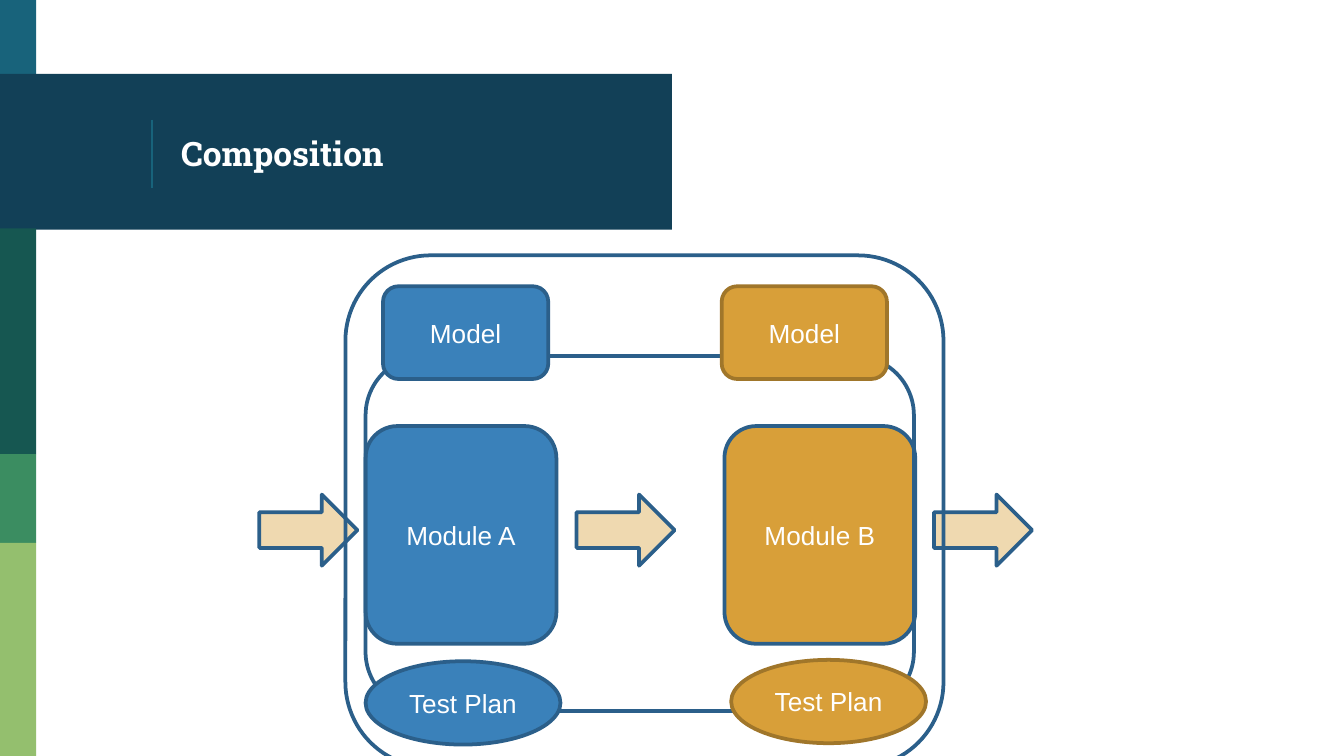
from dataclasses import dataclass

from lxml import etree
from pptx import Presentation
from pptx.dml.color import RGBColor
from pptx.enum import shapes as kinds, text as txt
from pptx.oxml.ns import qn
from pptx.util import Inches, Pt

COLORS = {
    "teal": "18637B", "navy": "124057", "pine": "165751", "green": "3B8D61",
    "lime": "94BF6E", "white": "FFFFFF", "blue": "3A81BA", "gold": "D89F39",
    "sand": "EFD9B0", "blue_edge": "2B5F8A", "gold_edge": "A0762A",
}
SHAPE = kinds.MSO_SHAPE
SLIDE_WIDTH = 10
SLIDE_HEIGHT = SLIDE_WIDTH * 9 / 16


@dataclass(frozen=True)
class Block:
    kind: SHAPE
    left: float
    top: float
    width: float
    height: float
    fill: str | None = None
    edge: str | None = None
    label: str = ""


def color(name: str) -> RGBColor:
    return RGBColor.from_string(COLORS[name])


def write(frame, words: str, font_format: dict, align=None) -> None:
    frame.word_wrap = True
    frame.vertical_anchor = txt.MSO_ANCHOR.MIDDLE
    paragraph = frame.paragraphs[0]
    paragraph.alignment = align
    run = paragraph.add_run()
    run.text = words
    for attribute, value in font_format.items():
        setattr(run.font, attribute, value)
    run.font.color.rgb = color("white")


def draw_block(slide, block: Block) -> None:
    shape = slide.shapes.add_shape(
        block.kind, Inches(block.left), Inches(block.top),
        Inches(block.width), Inches(block.height))
    shape.shadow.inherit = False
    if block.fill:
        shape.fill.solid()
        shape.fill.fore_color.rgb = color(block.fill)
    else:
        shape.fill.background()
    if block.edge:
        shape.line.color.rgb = color(block.edge)
        shape.line.width = Pt(2)
    else:
        shape.line.fill.background()
    if block.label:
        write(shape.text_frame, block.label, {"name": "Arial", "size": Pt(14)},
              txt.PP_ALIGN.CENTER)


def draw_title_rule(slide) -> None:
    rule = slide.shapes.add_connector(
        kinds.MSO_CONNECTOR.STRAIGHT,
        Inches(1.13), Inches(0.89), Inches(1.13), Inches(1.4))
    rule.line.color.rgb = color("teal")
    rule.line.width = Pt(0.75)
    etree.SubElement(rule._element.spPr, qn("a:effectLst"))


def draw_title(slide) -> None:
    title = slide.shapes.add_textbox(
        Inches(1.25), Inches(0.58), Inches(3.51), Inches(1.12))
    frame = title.text_frame
    for side in ("left", "top", "right", "bottom"):
        setattr(frame, f"margin_{side}", Inches(0.1))
    write(frame, "Composition",
          {"name": "Roboto Slab", "size": Pt(18), "bold": True})


SIDEBAR_WIDTH = 0.27
BACKDROP = [
    Block(SHAPE.RECTANGLE, 0, top, width, height, fill)
    for top, width, height, fill in (
        (0, SIDEBAR_WIDTH, 0.58, "teal"),
        (0.55, 5, 1.16, "navy"),
        (1.7, SIDEBAR_WIDTH, 1.68, "pine"),
        (3.38, SIDEBAR_WIDTH, 0.66, "green"),
        (4.04, SIDEBAR_WIDTH, 1.59, "lime"),
    )
]
MODULES = [
    Block(SHAPE.ROUNDED_RECTANGLE, left, 3.17, 1.42, 1.62, fill, "blue_edge", label)
    for left, fill, label in ((2.72, "blue", "Module A"), (5.39, "gold", "Module B"))
]
FLOW_ARROWS = [
    Block(SHAPE.RIGHT_ARROW, left, 3.68, 0.73, 0.53, "sand", "blue_edge")
    for left in (1.93, 4.29, 6.95)
]
INNER_FRAME = Block(SHAPE.ROUNDED_RECTANGLE, 2.72, 2.65, 4.08, 2.64, edge="blue_edge")
MODELS = [
    Block(SHAPE.ROUNDED_RECTANGLE, left, 2.13, 1.23, 0.69, hue, f"{hue}_edge", "Model")
    for left, hue in ((2.85, "blue"), (5.37, "gold"))
]
TEST_PLANS = [
    Block(SHAPE.OVAL, left, top, 1.45, 0.62, hue, f"{hue}_edge", "Test Plan")
    for left, top, hue in ((2.72, 4.92, "blue"), (5.44, 4.91, "gold"))
]
OUTER_FRAME = Block(SHAPE.ROUNDED_RECTANGLE, 2.57, 1.9, 4.45, 3.81, edge="blue_edge")


def main() -> None:
    deck = Presentation()
    deck.slide_width, deck.slide_height = Inches(SLIDE_WIDTH), Inches(SLIDE_HEIGHT)
    slide = deck.slides.add_slide(deck.slide_layouts[6])
    for block in BACKDROP:
        draw_block(slide, block)
    draw_title_rule(slide)
    draw_title(slide)
    for block in (*MODULES, *FLOW_ARROWS, INNER_FRAME, *MODELS, *TEST_PLANS, OUTER_FRAME):
        draw_block(slide, block)
    deck.save("out.pptx")


if __name__ == "__main__":
    main()
